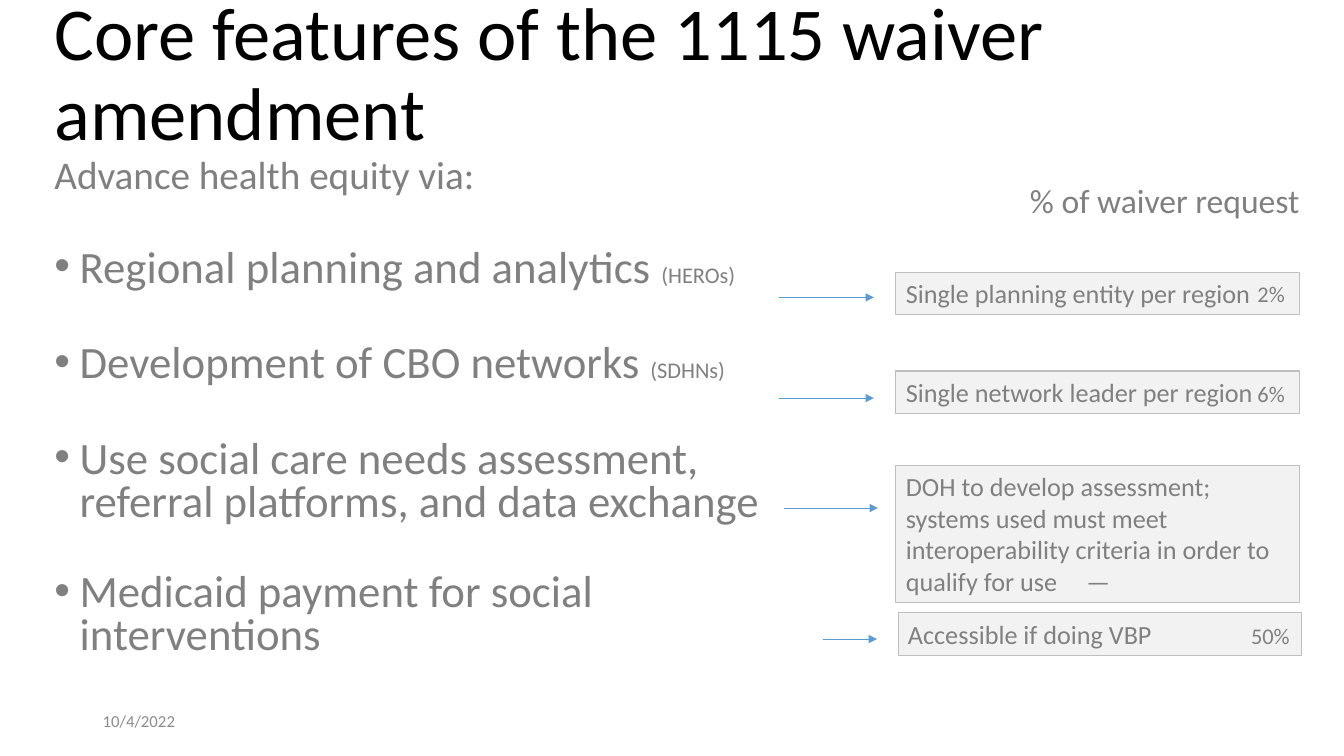
from lxml import etree
from pptx import Presentation
from pptx.dml.color import RGBColor
from pptx.enum.shapes import MSO_CONNECTOR, MSO_SHAPE
from pptx.enum.text import MSO_ANCHOR, MSO_AUTO_SIZE, PP_ALIGN
from pptx.oxml.ns import qn
from pptx.util import Pt

LEFT, CENTER = PP_ALIGN.LEFT, PP_ALIGN.CENTER
TOP, MIDDLE = MSO_ANCHOR.TOP, MSO_ANCHOR.MIDDLE
NO_FIT = MSO_AUTO_SIZE.NONE
RECTANGLE = MSO_SHAPE.RECTANGLE
STRAIGHT = MSO_CONNECTOR.STRAIGHT
GRAY = "808080"


def color(hex_string):
    return RGBColor.from_string(hex_string)


def write(shape, bounds, paragraphs, hex_string=GRAY, align=LEFT, anchor=TOP):
    shape.left, shape.top, shape.width, shape.height = map(Pt, bounds)
    frame = shape.text_frame
    frame.word_wrap = True
    frame.auto_size = NO_FIT
    frame.vertical_anchor = anchor
    for index, runs in enumerate(paragraphs):
        para = frame.add_paragraph() if index else frame.paragraphs[0]
        para.alignment = align
        for text, size in runs:
            span = para.add_run()
            span.text = text
            span.font.name = "Calibri"
            span.font.size = Pt(size)
            span.font.color.rgb = color(hex_string)
    return frame.paragraphs


deck = Presentation()
deck.slide_width, deck.slide_height = Pt(960), Pt(540)
page = deck.slides.add_slide(deck.slide_layouts[1])
shapes = page.shapes

title = write(shapes.title, (31.7, 13.7, 895.7, 81.4),
              [[("Core features of the 1115 waiver amendment", 53.3)]],
              "000000", anchor=MIDDLE)
title[0].line_spacing = 0.9

features = [
    [("Advance health equity via:", 28)],
    [("Regional planning and analytics ", 32), ("(HEROs)", 16)],
    [("Development of CBO networks ", 32), ("(SDHNs)", 16)],
    [("Use social care needs assessment, referral platforms, and data exchange", 32)],
    [("Medicaid payment for social interventions", 32)],
]
gaps = [10, 37, 37.5, 37.5, 34]
body = write(page.placeholders[1], (31.7, 110.2, 560.2, 383.8), features)
for index, (para, gap) in enumerate(zip(body, gaps)):
    para.line_spacing = 0.8
    para.space_before = Pt(gap)
    para.space_after = Pt(0)
    properties = para._p.get_or_add_pPr()
    indent = Pt(18) if index else 0
    properties.set("marL", str(indent))
    properties.set("indent", str(-indent))
    if index:
        etree.SubElement(properties, qn("a:buFont"), typeface="Arial")
        etree.SubElement(properties, qn("a:buChar"), char="•")
    else:
        etree.SubElement(properties, qn("a:buNone"))

requirements = [
    ("Single planning entity per region", 640, 194.4, 30.2),
    ("Single network leader per region", 640, 265, 30.2),
    ("DOH to develop assessment; systems used must meet interoperability "
     "criteria in order to qualify for use\t—", 640, 332.6, 97.9),
    ("Accessible if doing VBP", 641.5, 437.8, 30.2),
]
for text, left, top, height in requirements:
    box = shapes.add_shape(RECTANGLE, 0, 0, 0, 0)
    box.shadow.inherit = False
    box.fill.solid()
    box.fill.fore_color.rgb = color("F2F2F2")
    box.line.color.rgb = color("BFBFBF")
    box.line.width = Pt(0.75)
    para = write(box, (left, top, 288, height), [[(text, 18.7)]])[0]
    if "\t" in text:
        tabs = etree.SubElement(para._p.get_or_add_pPr(), qn("a:tabLst"))
        etree.SubElement(tabs, qn("a:tab"), pos=str(Pt(129)), algn="l")

arrows = [(556.6, 624.2, 212.4), (556.6, 624.2, 284.4),
          (560.2, 627.1, 362.9), (588.2, 626.4, 456.5)]
for start, end, y in arrows:
    arrow = shapes.add_connector(STRAIGHT, Pt(start), Pt(y), Pt(end), Pt(y))
    arrow.line.color.rgb = color("5B9BD5")
    arrow.line.width = Pt(0.5)
    etree.SubElement(arrow.line._get_or_add_ln(), qn("a:tailEnd"), type="triangle")
    etree.SubElement(arrow._element.spPr, qn("a:effectLst"))

labels = [
    ("2%", 16, (887.8, 196.6, 40.3, 26.6)),
    ("6%", 16, (887.8, 267.8, 40.3, 26.6)),
    ("50%", 16, (879.8, 440.6, 55.4, 26.6)),
    ("% of waiver request", 24, (727.9, 125.3, 208.1, 36)),
]
for text, size, bounds in labels:
    label = shapes.add_textbox(0, 0, 0, 0)
    write(label, bounds, [[(text, size)]], align=CENTER)[0].space_after = Pt(6)

date = shapes.add_textbox(0, 0, 0, 0)
write(date, (66.2, 500.4, 216, 28.8), [[("10/4/2022", 12)]], "8C8C8C", anchor=MIDDLE)

deck.save("out.pptx")
